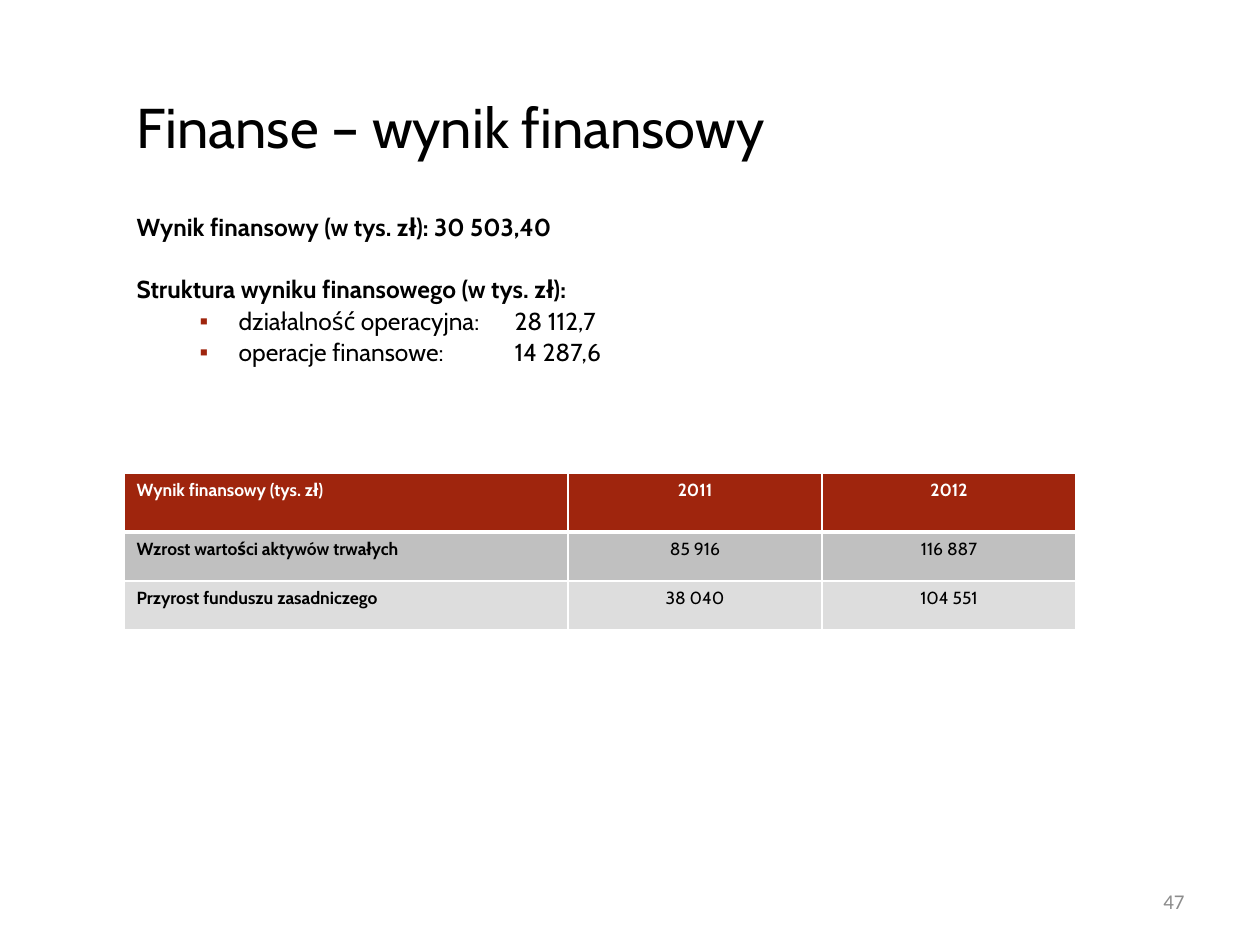
import pptx
import pptx.util
import pptx.dml.color
import pptx.enum.text
import pptx.oxml
import pptx.oxml.ns

SCALE = 914400 / 126  # EMU in one px
FONT = "Cabin"
COLORS = {"black": "000000", "white": "FFFFFF", "red": "9F250D",
          "dark": "C0C0C0", "light": "DDDDDD", "gray": "8C8C8C"}
ALIGN = pptx.enum.text.PP_ALIGN
ANCHOR = pptx.enum.text.MSO_ANCHOR
LEFT = 124
ROWS = [("Wynik finansowy (tys. zł)", "2011", "2012"),
        ("Wzrost wartości aktywów trwałych", "85 916", "116 887"),
        ("Przyrost funduszu zasadniczego", "38 040", "104 551")]


def px(n):
    return pptx.util.Emu(round(n * SCALE))


def rgb(name):
    return pptx.dml.color.RGBColor.from_string(COLORS[name])


def place(shape, x, y, w, h):
    shape.left, shape.top, shape.width, shape.height = map(px, (x, y, w, h))


def add_xml(parent, xml):
    space = pptx.oxml.ns.nsdecls("a")
    parent.append(pptx.oxml.parse_xml(xml.replace(" ", f" {space} ", 1)))


def write(para, text, size=14, bold=False, color="black", font=FONT,
          align=ALIGN.LEFT, before=0, line=None):
    para.alignment = align
    para.space_before = pptx.util.Pt(before)
    if line:
        para.line_spacing = line
    run = para.add_run()
    run.text = text
    run.font.name, run.font.bold = font, bold
    run.font.size = pptx.util.Pt(size)
    run.font.color.rgb = rgb(color)


def set_frame(frame, anchor):
    frame.word_wrap = True
    frame.auto_size = pptx.enum.text.MSO_AUTO_SIZE.NONE
    frame.vertical_anchor = anchor


def indent(para, margin, hang, bullet=False):
    props = para._p.get_or_add_pPr()
    props.set("marL", str(px(margin)))
    props.set("indent", str(-px(hang)))
    if bullet:
        add_xml(props, f'<a:buClr ><a:srgbClr val="{COLORS["red"]}"/></a:buClr>')
        add_xml(props, '<a:buFont typeface="Arial"/>')
        add_xml(props, '<a:buChar char="▪"/>')
        add_xml(props, f'<a:tabLst ><a:tab pos="{px(378)}" algn="l"/></a:tabLst>')
    else:
        add_xml(props, '<a:buNone />')


def add_title(slide):
    title = slide.shapes.title
    place(title, LEFT, 76, 1038, 100)
    set_frame(title.text_frame, ANCHOR.MIDDLE)
    write(title.text_frame.paragraphs[0], "Finanse – wynik finansowy", size=32)


def add_list(slide):
    body = slide.placeholders[1]
    place(body, LEFT, 209, 968, 263)
    frame = body.text_frame
    set_frame(frame, ANCHOR.TOP)
    # text, space before, is a bullet
    lines = [("Wynik finansowy (w tys. zł): 30 503,40", 0, False),
             ("Struktura wyniku finansowego (w tys. zł):", 20.5, False),
             ("działalność operacyjna:\t28 112,7", 2.8, True),
             ("operacje finansowe:\t14 287,6", 2.8, True)]
    for i, (text, before, bullet) in enumerate(lines):
        para = frame.add_paragraph() if i else frame.paragraphs[0]
        para.level = int(bullet)
        indent(para, *((102, 39) if bullet else (48, 48)), bullet=bullet)
        write(para, text, bold=not bullet, before=before, line=0.9)


def add_edges(cell, top, bottom):
    props = cell._tc.get_or_add_tcPr()
    for side, width in (("L", 1), ("R", 1), ("T", top), ("B", bottom)):
        add_xml(props, f'<a:ln{side} w="{width * 12700}"><a:solidFill>'
                f'<a:srgbClr val="{COLORS["white"]}"/></a:solidFill></a:ln{side}>')


def add_grid(slide):
    widths, heights = (444, 254, 254), (59, 49, 49)
    table = slide.shapes.add_table(
        len(ROWS), len(widths), px(LEFT), px(473),
        px(sum(widths)), px(sum(heights))).table
    for col, width in zip(table.columns, widths):
        col.width = px(width)
    fills = ("red", "dark", "light")
    for r, (row, texts) in enumerate(zip(table.rows, ROWS)):
        row.height = px(heights[r])
        for c, text in enumerate(texts):
            cell = table.cell(r, c)
            # thick rule under the header
            add_edges(cell, 3 if r == 1 else 1, 3 if r == 0 else 1)
            cell.fill.solid()
            cell.fill.fore_color.rgb = rgb(fills[r])
            write(cell.text_frame.paragraphs[0], text, size=10,
                  bold=r == 0 or c == 0, color="black" if r else "white",
                  align=ALIGN.CENTER if c else ALIGN.LEFT)


def add_number(slide):
    box = slide.shapes.add_textbox(px(903), px(876), px(294), px(50))
    set_frame(box.text_frame, ANCHOR.MIDDLE)
    write(box.text_frame.paragraphs[0], "47", size=12, color="gray",
          font="Calibri", align=ALIGN.RIGHT)


def main():
    deck = pptx.Presentation()
    deck.slide_width, deck.slide_height = px(1260), px(945)
    slide = deck.slides.add_slide(deck.slide_layouts[1])
    add_title(slide)
    add_list(slide)
    add_grid(slide)
    add_number(slide)
    deck.save("out.pptx")


if __name__ == "__main__":
    main()
